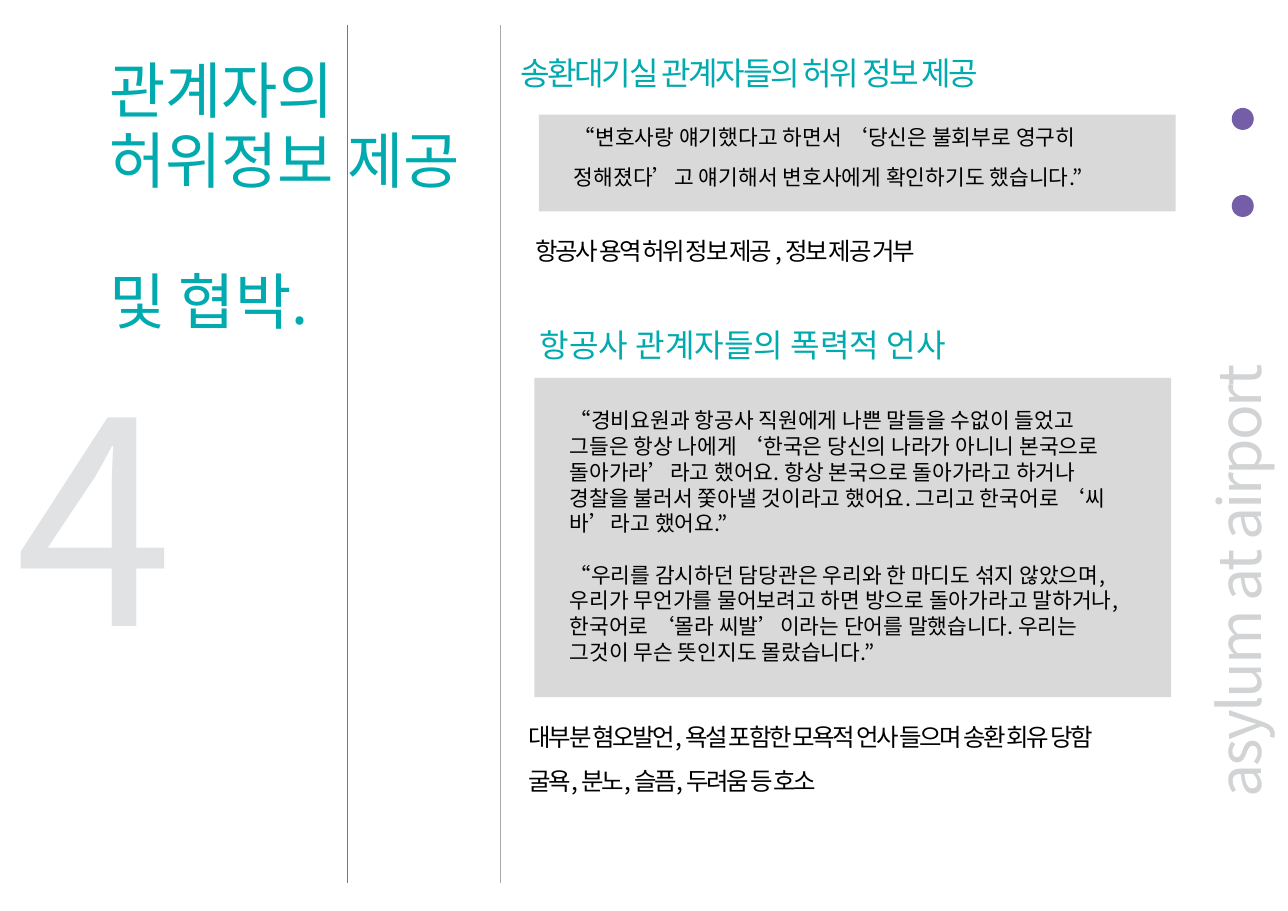
import pptx
import pptx.dml.color
import pptx.enum.shapes
import pptx.enum.text
import pptx.oxml.ns
import pptx.util
from lxml import etree
from pptx.util import Inches

RGBColor = pptx.dml.color.RGBColor
TEAL = RGBColor(0x00, 0xAA, 0xAE)
PURPLE = RGBColor(0x74, 0x5E, 0xA8)
BLACK = RGBColor(0x00, 0x00, 0x00)
RULE_GREY = RGBColor(0xA7, 0xA9, 0xAC)
PANEL_GREY = RGBColor(0xD9, 0xD9, 0xD9)
SIDE_GREY = RGBColor(0xD1, 0xD3, 0xD4)
NUMBER_GREY = RGBColor(0xE1, 0xE2, 0xE4)
FONT = "Noto Sans CJK KR"

TITLE = ["관계자의", "허위정보 제공", "및 협박."]
FALSE_INFO_QUOTE = [
    "“변호사랑 얘기했다고 하면서 ‘당신은 불회부로 영구히 "
    "정해졌다’고 얘기해서 변호사에게 확인하기도 했습니다.”",
]
ABUSE_QUOTES = [
    "“경비요원과 항공사 직원에게 나쁜 말들을 수없이 들었고 "
    "그들은 항상 나에게 ‘한국은 당신의 나라가 아니니 본국으로 "
    "돌아가라’라고 했어요. 항상 본국으로 돌아가라고 하거나 "
    "경찰을 불러서 쫓아낼 것이라고 했어요. 그리고 한국어로 ‘씨바’라고 했어요.”",
    "“우리를 감시하던 담당관은 우리와 한 마디도 섞지 않았으며, "
    "우리가 무언가를 물어보려고 하면 방으로 돌아가라고 말하거나, "
    "한국어로 ‘몰라 씨발’이라는 단어를 말했습니다. 우리는 그것이 "
    "무슨 뜻인지도 몰랐습니다.”",
]
ABUSE_NOTES = [
    "대부분 혐오발언, 욕설 포함한 모욕적 언사 들으며 송환 회유 당함",
    "굴욕, 분노, 슬픔, 두려움 등 호소",
]


def add_text(slide, box, lines, size, color, leading=None, tracking=0, last_gap=0):
    """Text without insets; last_gap is the space in points above the last paragraph."""
    text_box = slide.shapes.add_textbox(*(Inches(length) for length in box))
    frame = text_box.text_frame
    frame.word_wrap = True
    frame.margin_left = frame.margin_right = 0
    frame.margin_top = frame.margin_bottom = 0
    frame.vertical_anchor = pptx.enum.text.MSO_ANCHOR.TOP
    for index, line in enumerate(lines):
        paragraph = frame.add_paragraph() if index else frame.paragraphs[0]
        paragraph.text = line
        if leading:
            paragraph.line_spacing = pptx.util.Pt(leading)
        for run in paragraph.runs:
            run.font.name = FONT
            run.font.size = pptx.util.Pt(size)
            run.font.color.rgb = color
            properties = run.font._element
            east_asian = etree.SubElement(properties, pptx.oxml.ns.qn("a:ea"))
            east_asian.set("typeface", FONT)
            if tracking:
                properties.set("spc", str(int(tracking * 100)))
    if last_gap:
        frame.paragraphs[-1].space_before = pptx.util.Pt(last_gap)
    return text_box


def add_heading(slide, left, top, text, tracking=0):
    add_text(slide, (left, top, 6.3, 0.4), [text], 21, TEAL, 24, tracking)


def add_notes_text(slide, left, top, lines):
    add_text(slide, (left, top, 6.5, 0.4 * len(lines)), lines, 16, BLACK, 28.8, -1.5)


def add_filled(slide, kind, left, top, width, height, color):
    shape = slide.shapes.add_shape(
        kind, Inches(left), Inches(top), Inches(width), Inches(height))
    shape.fill.solid()
    shape.fill.fore_color.rgb = color
    shape.line.fill.background()
    shape.shadow.inherit = False


def add_quote(slide, left, top, height, text_top, lines, leading, last_gap=0):
    add_filled(slide, pptx.enum.shapes.MSO_SHAPE.RECTANGLE,
               left, top, 5.78, height, PANEL_GREY)
    add_text(slide, (left + 0.32, text_top, 5.1, top + height - text_top),
             lines, 14, BLACK, leading, last_gap=last_gap)


def add_rule(slide, left, color):
    rule = slide.shapes.add_connector(
        pptx.enum.shapes.MSO_CONNECTOR.STRAIGHT,
        Inches(left), Inches(0.23), Inches(left), Inches(8.02))
    rule.line.color.rgb = color
    rule.line.width = pptx.util.Pt(0.25)
    etree.SubElement(rule._element.spPr, pptx.oxml.ns.qn("a:effectLst"))


def main():
    deck = pptx.Presentation()
    deck.slide_width = Inches(11.69)
    deck.slide_height = Inches(8.27)
    slide = deck.slides.add_slide(deck.slide_layouts[6])

    # Page frame: rules, dots, section number and side label
    add_rule(slide, 3.15, TEAL)
    add_rule(slide, 4.54, RULE_GREY)
    for dot_top in (0.98, 1.77):
        add_filled(slide, pptx.enum.shapes.MSO_SHAPE.OVAL,
                   11.18, dot_top, 0.2, 0.2, PURPLE)
    add_text(slide, (0.14, 3.1, 1.8, 3.75), ["4"], 186, NUMBER_GREY)
    side_label = add_text(slide, (8.3, 3.72, 6.24, 0.79), ["asylum at airport"],
                          38.5, SIDE_GREY, 38.5, -1.5)
    side_label.rotation = 270

    # Title
    add_text(slide, (0.99, 0.5, 3.4, 2.76), TITLE, 40, TEAL, 46, last_gap=46)

    # False information
    add_heading(slide, 4.72, 0.5, "송환대기실 관계자들의 허위 정보 제공", -1.5)
    add_quote(slide, 4.89, 1.04, 0.88, 1.01, FALSE_INFO_QUOTE, 25.5)
    add_notes_text(slide, 4.86, 2.01, ["항공사 용역 허위 정보 제공 , 정보 제공 거부"])

    # Verbal abuse
    add_heading(slide, 4.9, 2.97, "항공사 관계자들의 폭력적 언사")
    add_quote(slide, 4.85, 3.43, 2.9, 3.7, ABUSE_QUOTES, 16.8, last_gap=16.8)
    add_notes_text(slide, 4.8, 6.42, ABUSE_NOTES)

    deck.save("out.pptx")


if __name__ == "__main__":
    main()
